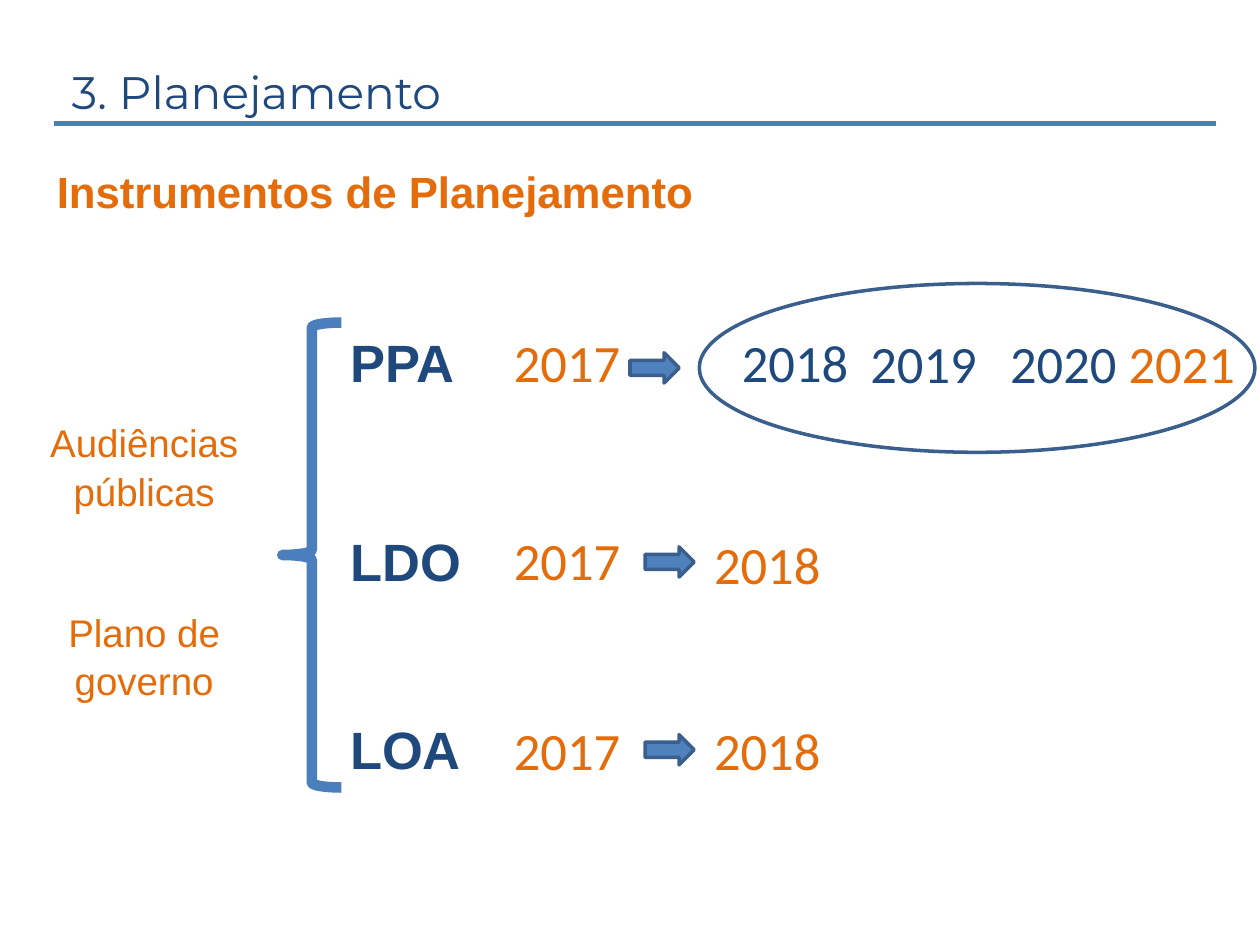
from pptx import Presentation
from pptx.dml.color import RGBColor
from pptx.enum.shapes import MSO_CONNECTOR, MSO_SHAPE
from pptx.enum.text import MSO_ANCHOR, MSO_AUTO_SIZE, PP_ALIGN
from pptx.util import Pt
from lxml import etree

NAVY, ORANGE = "1F497D", "E46C0A"
BLUE, EDGE, FILL = "4B7EBC", "3A5F8C", "4F81BD"

deck = Presentation()
deck.slide_width, deck.slide_height = Pt(720), Pt(540)
slide = deck.slides.add_slide(deck.slide_layouts[5])
shapes = slide.shapes


def rgb(code):
    return RGBColor.from_string(code)


def write(text, left, top, width, height, size=30, font="Calibri", color=ORANGE,
          bold=False, align=PP_ALIGN.LEFT, wrap=True, gap=0, lead=1, box=None):
    """Fill the given box, or a new text box, with one paragraph per line."""
    box = box or shapes.add_textbox(0, 0, 0, 0)
    box.left, box.top, box.width, box.height = map(Pt, (left, top, width, height))
    frame = box.text_frame
    frame.text = text
    frame.word_wrap = wrap
    frame.auto_size = MSO_AUTO_SIZE.SHAPE_TO_FIT_TEXT
    frame.vertical_anchor = MSO_ANCHOR.TOP
    for i, para in enumerate(frame.paragraphs):
        para.alignment = align
        para.line_spacing = lead
        para.space_before = Pt(gap if i else 0)
        para.font.size, para.font.name, para.font.bold = Pt(size), font, bold
        para.font.color.rgb = rgb(color)


# Heading
write("3. Planejamento", 33.8, 33.1, 576.7, 38.9, size=26, font="Montserrat",
      color=NAVY, box=shapes.title)
rule = shapes.add_connector(MSO_CONNECTOR.STRAIGHT, Pt(31), Pt(70.6), Pt(694.8), Pt(70.6))
rule.line.color.rgb, rule.line.width = rgb(BLUE), Pt(3)
etree.SubElement(rule.line._get_or_add_ln().getparent(),
                 "{http://schemas.openxmlformats.org/drawingml/2006/main}effectLst")
write("Instrumentos de Planejamento", 23, 90.7, 382.3, 37.4, size=25, font="Arial",
      bold=True, align=PP_ALIGN.CENTER, wrap=False)

# One row per plan: name, top, year made, years covered (text, left, top, colour)
rows = [
    ("PPA", 185, 185, [("2018", 416.9, 185, NAVY), ("2019", 490.3, 185.8, NAVY),
                       ("2020", 570.2, 185.8, NAVY), ("2021", 637.9, 185.8, ORANGE)]),
    ("LDO", 298.8, 298.1, [("2018", 401, 300.2, ORANGE)]),
    ("LOA", 406.1, 406.8, [("2018", 401, 406.8, ORANGE)]),
]
for name, top, made, years in rows:
    write(name, 193, top, 120, 43.9, font="Arial", color=NAVY, bold=True)
    write("2017", 286.6, made, 124.6, 43.9)
    for year, left, high, color in years:
        write(year, left, high, 124.6, 43.9, color=color)

# Drawn marks
marks = [
    (MSO_SHAPE.OVAL, 399.6, 162, 317.5, 96.5, None, EDGE, 2),
    (MSO_SHAPE.RIGHT_ARROW, 360, 201.6, 28.1, 17.3, FILL, EDGE, 2),
    (MSO_SHAPE.RIGHT_ARROW, 368.6, 312.5, 28.1, 17.3, FILL, EDGE, 2),
    (MSO_SHAPE.RIGHT_ARROW, 368.6, 419.8, 28.1, 17.3, FILL, EDGE, 2),
    (MSO_SHAPE.LEFT_BRACE, 161.3, 184.3, 33.8, 265.7, None, BLUE, 6),
]
for kind, left, top, width, height, fill, line, weight in marks:
    mark = shapes.add_shape(kind, Pt(left), Pt(top), Pt(width), Pt(height))
    mark.shadow.inherit = False
    if fill:
        mark.fill.solid()
        mark.fill.fore_color.rgb = rgb(fill)
    else:
        mark.fill.background()
    mark.line.color.rgb, mark.line.width = rgb(line), Pt(weight)

# Inputs to the plans
write("Audiências públicas\nPlano de governo", 15.1, 234.7, 134.6, 193.7, size=22,
      font="Arial", align=PP_ALIGN.CENTER, gap=53, lead=1.05)

deck.save("out.pptx")
